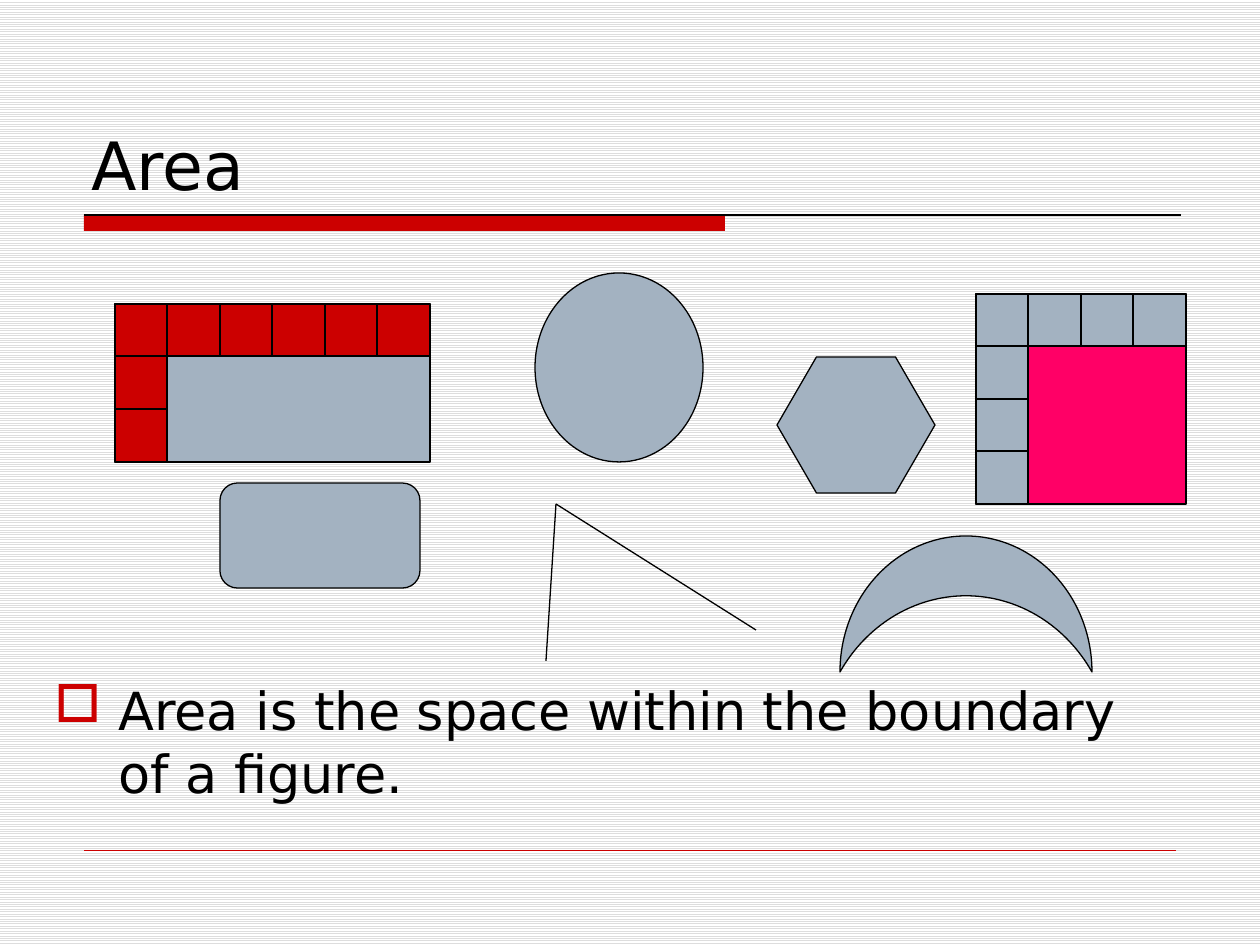
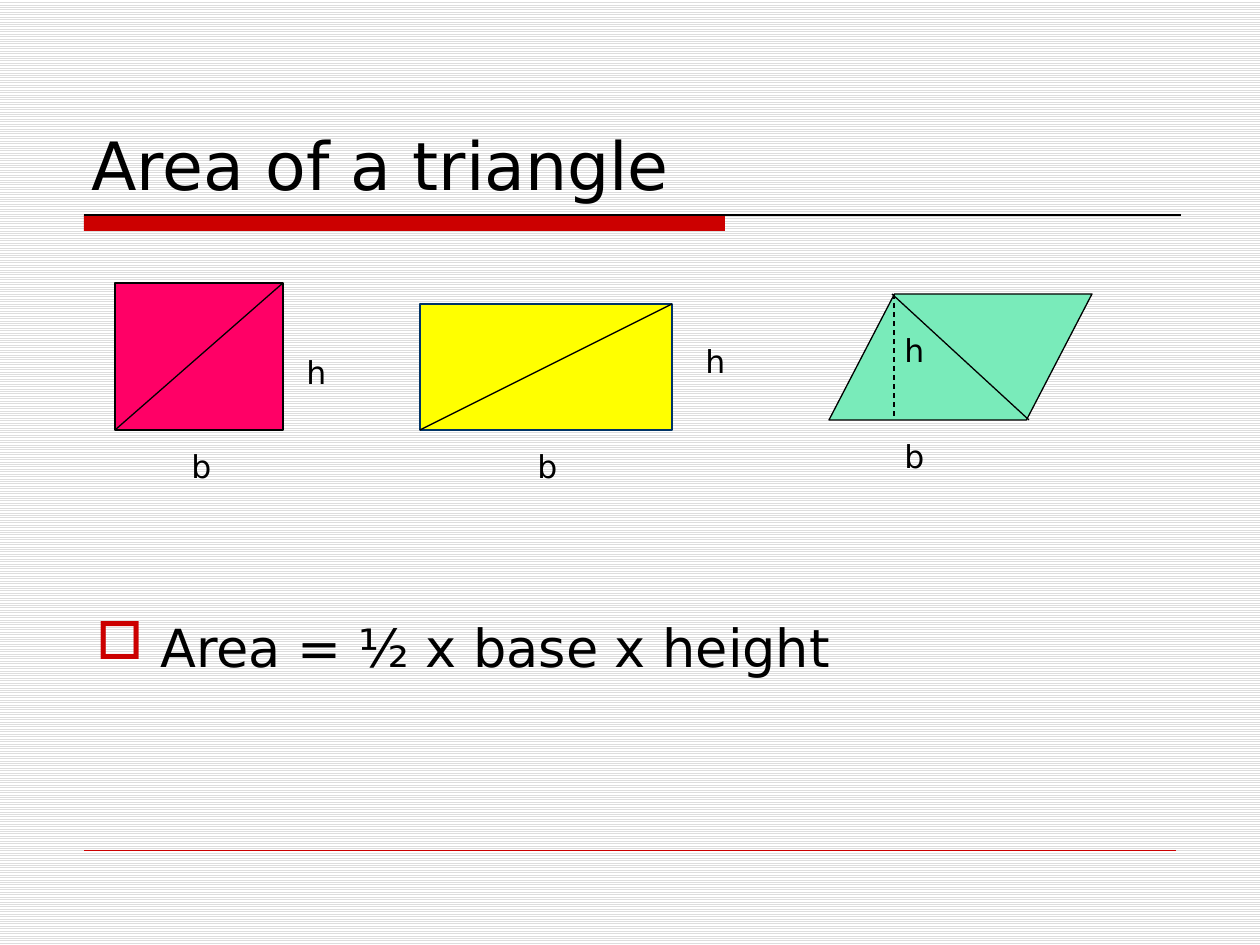
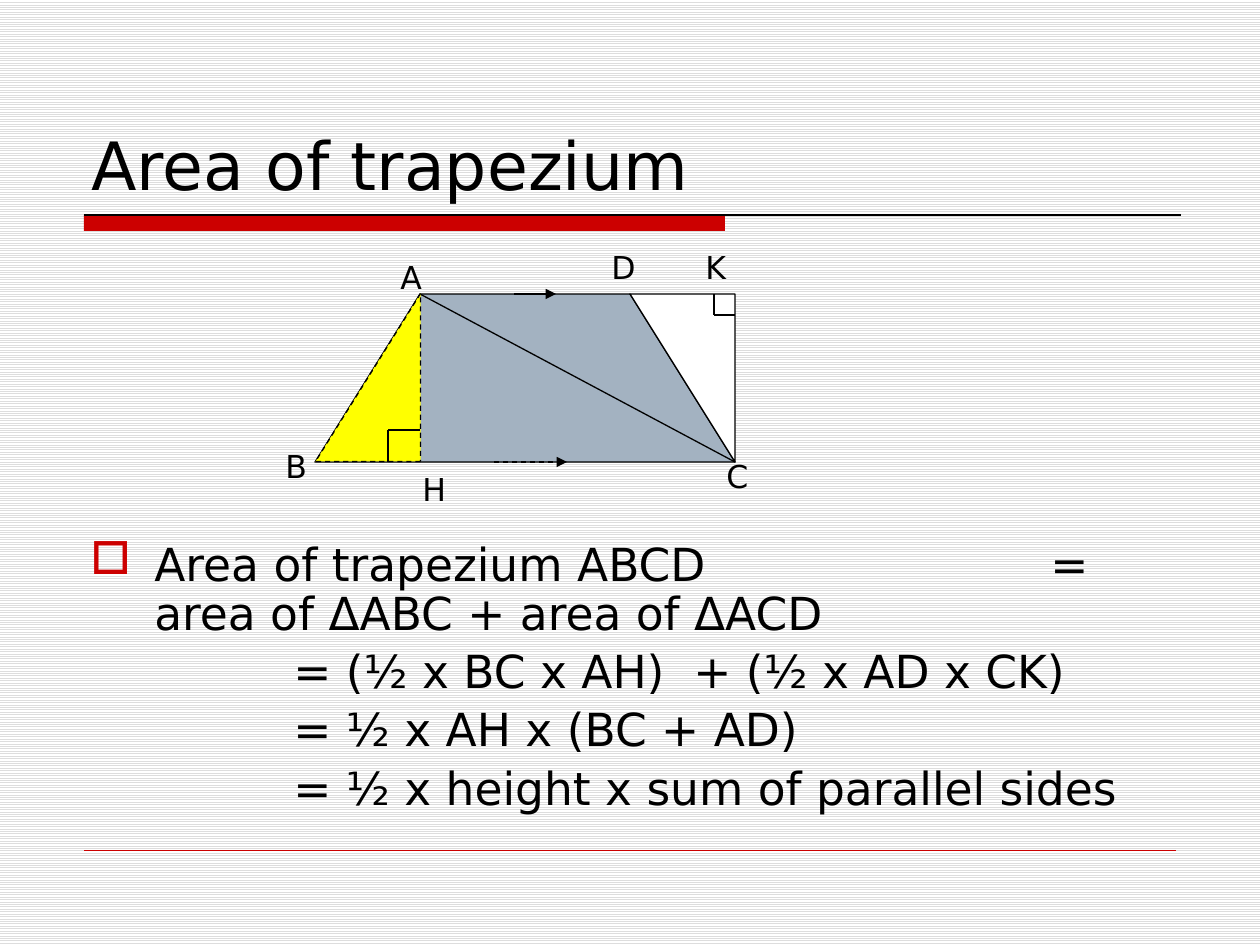
"""Builds three slides about the areas of plane figures."""
from pptx import Presentation
from pptx.dml.color import RGBColor
from pptx.enum.dml import MSO_LINE, MSO_PATTERN
from pptx.enum.shapes import MSO_CONNECTOR, MSO_SHAPE
from pptx.enum.text import MSO_ANCHOR
from pptx.oxml.ns import qn
from pptx.util import Emu, Pt
from lxml.etree import SubElement

FONT = "DejaVu Sans"
BLACK = RGBColor(0x00, 0x00, 0x00)
WHITE = RGBColor(0xFF, 0xFF, 0xFF)
PALE = RGBColor(0xDD, 0xDD, 0xDD)
RED = RGBColor(0xCC, 0x00, 0x00)
PINK = RGBColor(0xFF, 0x00, 0x66)
GREY = RGBColor(0xA3, 0xB2, 0xC1)
YELLOW = RGBColor(0xFF, 0xFF, 0x00)
MINT = RGBColor(0x79, 0xEB, 0xBA)
NAVY = RGBColor(0x00, 0x33, 0x66)


def px(count):
    """Turn pixels into EMU."""
    return Emu(round(count * 914400 / 126))


def paint(shape, fill, line=BLACK, dash=False):
    """Give a shape its fill and outline."""
    shape.shadow.inherit = False
    shape.fill.solid()
    shape.fill.fore_color.rgb = fill
    if line is None:
        shape.line.fill.background()
        return
    shape.line.color.rgb = line
    shape.line.width = Pt(0.75)
    if dash:
        shape.line.dash_style = MSO_LINE.DASH


def figure(slide, kind, box, fill, line=BLACK, adjust=None, turn=0, dash=False):
    """Add a preset shape."""
    shape = slide.shapes.add_shape(kind, *map(px, box))
    shape.rotation = turn
    if adjust is not None:
        shape.adjustments[0] = adjust
    paint(shape, fill, line, dash)


def outline(slide, points, fill):
    """Add a closed polygon."""
    spots = [(px(x), px(y)) for x, y in points]
    builder = slide.shapes.build_freeform(*spots[0])
    builder.add_line_segments(spots[1:], close=True)
    paint(builder.convert_to_shape(), fill)


def stroke(slide, start, end, color=BLACK, width=0.75, dash=False, arrow=False):
    """Add a straight line."""
    line = slide.shapes.add_connector(
        MSO_CONNECTOR.STRAIGHT, *map(px, (*start, *end)))
    line.line.color.rgb = color
    line.line.width = Pt(width)
    if dash:
        line.line.dash_style = MSO_LINE.DASH
    if arrow:
        SubElement(line.line._get_or_add_ln(), qn("a:tailEnd"), type="triangle")
    SubElement(line._element.spPr, qn("a:effectLst"))


def write(slide, box, lines, size):
    """Add a text box and return its frame."""
    frame = slide.shapes.add_textbox(*map(px, box)).text_frame
    frame.word_wrap = True
    frame.text = "\n".join(lines)
    for para in frame.paragraphs:
        for run in para.runs:
            run.font.name = FONT
            run.font.size = Pt(size)
            run.font.color.rgb = BLACK
    return frame


def label(slide, text, left, top, width=53):
    """Add a short label beside a figure."""
    write(slide, (left, top, width, 50), [text], 18)


def indent(para, margin, first=0):
    """Set the left margin and first line indent."""
    props = para._p.get_or_add_pPr()
    props.set("marL", str(px(margin)))
    props.set("indent", str(px(first)))
    return props


def body(slide, box, lines, size, spacing=1.0, stop=None):
    """Add a bulleted statement with its further steps."""
    paras = write(slide, box, lines, size).paragraphs
    for para in paras:
        para.space_before = Pt(size / 5)
        para.line_spacing = spacing
        indent(para, 203)
    props = indent(paras[0], 64, -64)
    SubElement(SubElement(props, qn("a:buClr")), qn("a:srgbClr"), val=str(RED))
    SubElement(props, qn("a:buChar"), char="□")
    if stop:
        tabs = SubElement(props, qn("a:tabLst"))
        SubElement(tabs, qn("a:tab"), pos=str(px(stop)), algn="l")


def start(deck, title, top=42):
    """Add a slide with its background, title, band and foot line."""
    slide = deck.slides.add_slide(deck.slide_layouts[6])
    fill = slide.background.fill
    fill.patterned()
    fill.pattern = MSO_PATTERN.LIGHT_HORIZONTAL
    fill.fore_color.rgb = PALE
    fill.back_color.rgb = WHITE
    figure(slide, MSO_SHAPE.RECTANGLE, (84, 215, 641, 16), RED, None)
    stroke(slide, (84, 215), (1181, 215))
    stroke(slide, (84, 850), (1176, 850), RED, 0.25)
    frame = write(slide, (79, top, 1103, 210 - top), [title], 38)
    frame.vertical_anchor = MSO_ANCHOR.BOTTOM
    return slide


def tiled(slide, box, cols, rows, fill, edge):
    """Add a rectangle with unit squares on its top and left sides."""
    left, top, width, height = box
    figure(slide, MSO_SHAPE.RECTANGLE, box, fill)
    cells = [(0, row) for row in range(rows)]
    cells += [(col, 0) for col in range(1, cols)]
    for col, row in cells:
        x, y = width * col // cols, height * row // rows
        wide = width * (col + 1) // cols - x
        high = height * (row + 1) // rows - y
        figure(slide, MSO_SHAPE.RECTANGLE, (left + x, top + y, wide, high), edge)


def area(deck):
    """Build the slide on what area means."""
    slide = start(deck, "Area", 84)
    body(slide, (42, 672, 1103, 168),
         ["Area is the space within the boundary of a figure."], 30)
    figure(slide, MSO_SHAPE.OVAL, (535, 273, 168, 189), GREY)
    figure(slide, MSO_SHAPE.HEXAGON, (777, 357, 158, 136), GREY, adjust=0.29)
    figure(slide, MSO_SHAPE.ROUNDED_RECTANGLE, (220, 483, 200, 105), GREY)
    for end in ((756, 630), (546, 661)):
        stroke(slide, (556, 504), end)
    figure(slide, MSO_SHAPE.MOON, (898, 478, 136, 252), GREY, adjust=0.44, turn=90)
    tiled(slide, (115, 304, 315, 158), 6, 3, GREY, RED)
    tiled(slide, (976, 294, 210, 210), 4, 4, PINK, GREY)


def triangle(deck):
    """Build the slide on the area of a triangle."""
    slide = start(deck, "Area of a triangle")
    body(slide, (84, 609, 1103, 221), ["Area = ½ x base x height"], 30)
    figure(slide, MSO_SHAPE.RECTANGLE, (115, 283, 168, 147), PINK)
    figure(slide, MSO_SHAPE.RECTANGLE, (420, 304, 252, 126), YELLOW, NAVY)
    figure(slide, MSO_SHAPE.PARALLELOGRAM, (829, 294, 263, 126), MINT, adjust=0.52)
    for text, left, top in (("b", 179, 441), ("b", 525, 441), ("h", 294, 347),
                            ("h", 693, 336), ("h", 892, 325), ("b", 892, 431)):
        label(slide, text, left, top)
    stroke(slide, (115, 430), (283, 283))
    stroke(slide, (420, 430), (672, 304))
    stroke(slide, (894, 294), (894, 420), dash=True)
    stroke(slide, (892, 294), (1029, 420))


def trapezium(deck):
    """Build the slide on the area of a trapezium."""
    slide = start(deck, "Area of trapezium")
    body(slide, (78, 536, 1103, 305),
         ["Area of trapezium ABCD\t= area of ΔABC + area of ΔACD",
          "= (½ x BC x AH)  + (½ x AD x CK)",
          "= ½ x AH x (BC + AD)",
          "= ½ x height x sum of parallel sides"], 26, 0.9, 960)
    for text, left, top in (("A", 388, 252), ("D", 599, 242), ("C", 714, 451),
                            ("H", 410, 464), ("B", 273, 441), ("K", 693, 242)):
        label(slide, text, left, top, 63)
    a, b, c, d = (420, 294), (315, 462), (735, 462), (630, 294)
    outline(slide, (a, b, c, d), GREY)
    stroke(slide, a, c)
    stroke(slide, (494, 462), (567, 462), dash=True, arrow=True)
    stroke(slide, (514, 294), (556, 294), arrow=True)
    figure(slide, MSO_SHAPE.RIGHT_TRIANGLE, (284, 325, 168, 105), YELLOW,
           turn=270, dash=True)
    figure(slide, MSO_SHAPE.RIGHT_TRIANGLE, (630, 294, 105, 168), WHITE, turn=180)
    for first, bend, last in (((420, 430), (388, 430), (388, 462)),
                              ((714, 294), (714, 315), (735, 315))):
        stroke(slide, first, bend)
        stroke(slide, bend, last)


def main():
    """Build and save the deck."""
    deck = Presentation()
    deck.slide_width, deck.slide_height = px(1260), px(945)
    area(deck)
    triangle(deck)
    trapezium(deck)
    deck.save("out.pptx")


if __name__ == "__main__":
    main()
